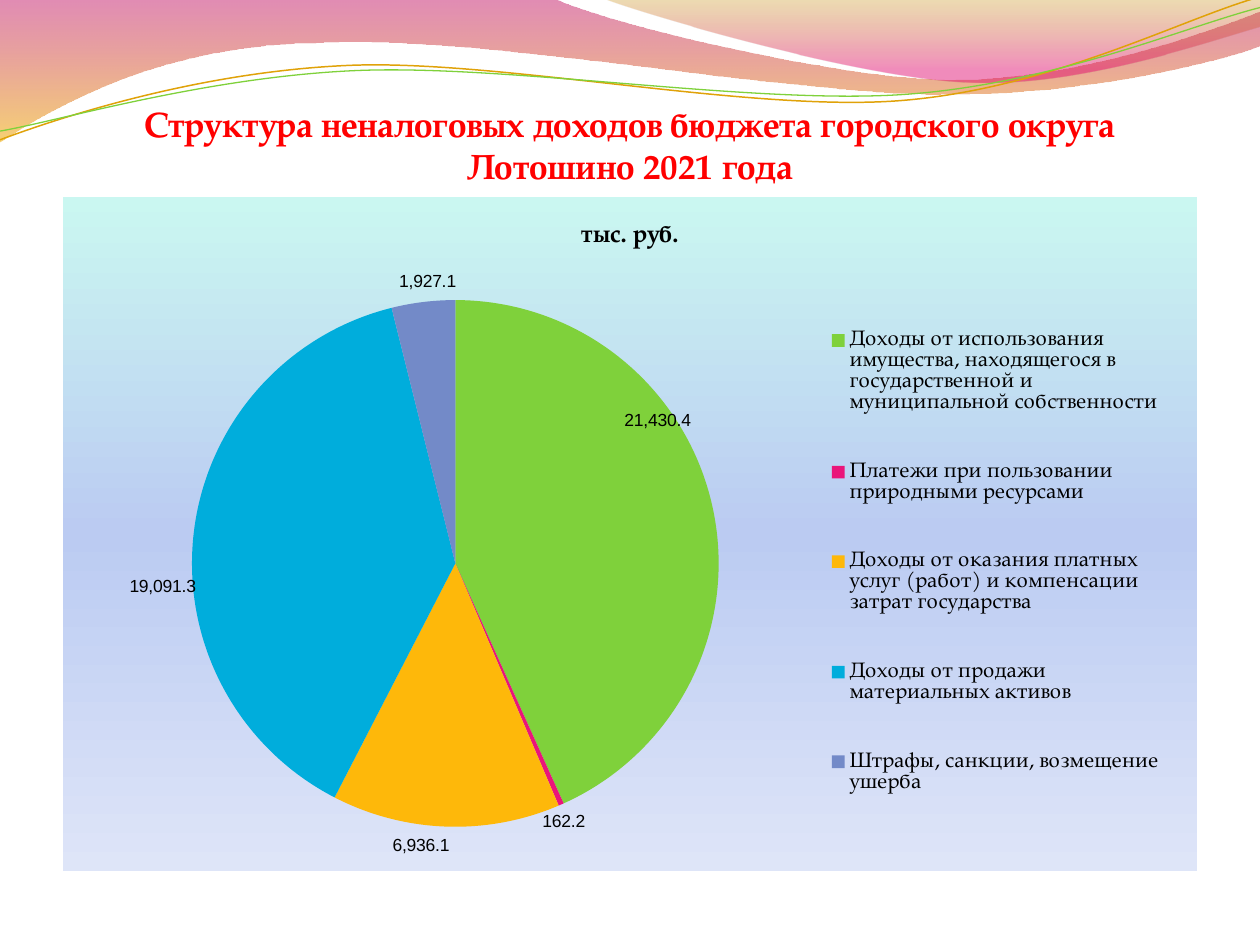
from lxml import etree
from pptx import Presentation
from pptx import util as u
from pptx.chart import data as cd
from pptx.dml.color import RGBColor
from pptx.enum import chart as ch, text
from pptx.oxml import parse_xml
from pptx.oxml.ns import nsdecls, qn

RED = RGBColor(0xFF, 0x00, 0x00)
BLACK = RGBColor(0x00, 0x00, 0x00)
GOLD = RGBColor(0xE0, 0xA2, 0x09)
GREEN = RGBColor(0x7F, 0xD1, 0x3B)
PINK = RGBColor(0xEA, 0x15, 0x7A)
AMBER = RGBColor(0xFE, 0xB8, 0x0A)
CYAN = RGBColor(0x00, 0xAD, 0xDC)
BLUE = RGBColor(0x73, 0x8A, 0xC8)
PLUM = RGBColor(0xBD, 0x00, 0x59)
ORANGE = RGBColor(0xF0, 0xAB, 0x00)
OCHRE = RGBColor(0xC3, 0x8B, 0x00)
ROSE = RGBColor(0xE1, 0x00, 0x6B)
MINT = RGBColor(0xCA, 0xF7, 0xF1)
SKY = RGBColor(0xBB, 0xCB, 0xF2)
PALE = RGBColor(0xDE, 0xE5, 0xF8)

SERIF = "TeX Gyre Pagella"
SANS = "Arial"
UNIT = "тыс. руб."

BANDS = [
    ([(0, -0.7), (316.8, -0.7), (342.7, 12.2, 478.1, 45.4, 545.8, 45.4),
      (614.2, 45.4, 689.8, 18.7, 720, 6.5), (720.7, 25.9),
      (707.8, 31.7, 626.4, 54.7, 537.1, 54),
      (447.8, 54, 275, 20.2, 185, 24.5),
      (92.9, 25.2, 33.1, 59.8, -0.7, 81.4)],
     [(0, PLUM, 45), (100, ORANGE, 55)]),
    ([(344.9, -0.7), (366.5, 7.9, 491, 44.6, 553.7, 46.8),
      (616.3, 49.7, 691.9, 23, 720, 15.1), (720, 0)],
     [(0, OCHRE, 30), (80, ROSE, 45)]),
]
LINES = [
    ([(0, 79.9), (34.6, 67, 113.8, 41, 199.4, 37.4),
      (284.4, 33.8, 427, 64.1, 513.4, 57.6),
      (599.8, 51.1, 675.4, 10.8, 718.6, -1.4)], GOLD, 0.85),
    ([(0, 74.9), (33.8, 69.1, 118.1, 43.9, 203.8, 40.3),
      (290.2, 36.7, 429.8, 59.8, 516.2, 54),
      (601.9, 48.2, 677.5, 15.1, 720, 4.3)], GREEN, 0.75),
]
ITEMS = [
    ("Доходы от использования имущества, находящегося в государственной "
     "и муниципальной собственности", 21430.4, GREEN, (-54.7, -43.3)),
    ("Платежи при пользовании природными ресурсами",
     162.2, PINK, (-12.5, 0.4)),
    ("Доходы от оказания платных услуг (работ) и компенсации затрат "
     "государства", 6936.1, AMBER, (-14, 1)),
    ("Доходы от продажи материальных активов",
     19091.3, CYAN, (5.5, 37)),
    ("Штрафы, санкции, возмещение ушерба",
     1927.1, BLUE, (19.3, -2)),
]


def blend(stops):
    marks = "".join(
        f'<a:gs pos="{pos * 1000}"><a:srgbClr val="{color}">'
        f'<a:alpha val="{alpha * 1000}"/></a:srgbClr></a:gs>'
        for pos, color, alpha in stops)
    return parse_xml(
        f'<a:gradFill {nsdecls("a")} rotWithShape="1"><a:gsLst>{marks}'
        '</a:gsLst><a:lin ang="5400000" scaled="0"/></a:gradFill>')


def draw(slide, left, top, steps, close):
    dots = [((left + step[i]) * 100, (top + step[i + 1]) * 100)
            for step in steps for i in range(0, len(step), 2)]
    pen = slide.shapes.build_freeform(*dots[0], scale=u.Pt(1) / 100)
    pen.add_line_segments(dots[1:], close=close)
    shape = pen.convert_to_shape()
    shape.shadow.inherit = False
    legs = iter(list(shape._element.iter(qn("a:lnTo"))))
    for step in steps[1:]:
        leg = next(legs)
        if len(step) == 6:
            leg.tag = qn("a:cubicBezTo")
            for _ in range(2):
                spare = next(legs)
                leg.append(spare[0])
                spare.getparent().remove(spare)
    return shape


def add_waves(slide, left, top):
    for steps, stops in BANDS:
        band = draw(slide, left, top, steps, True)
        band.line.fill.background()
        band._element.spPr.find(qn("a:custGeom")).addnext(blend(stops))
    for steps, color, width in LINES:
        line = draw(slide, left, top, steps, False)
        line.fill.background()
        line.line.color.rgb = color
        line.line.width = u.Pt(width)


def set_font(font, name, size, color, bold=False):
    font.name, font.size, font.bold = name, u.Pt(size), bold
    font.color.rgb = color


def add_title(slide, left, top, width, height):
    title = slide.shapes.title
    title.left, title.top = u.Pt(left), u.Pt(top)
    title.width, title.height = u.Pt(width), u.Pt(height)
    frame = title.text_frame
    frame.text = ("Структура неналоговых доходов бюджета городского округа "
                  "Лотошино 2021 года")
    frame.word_wrap = True
    frame.auto_size = text.MSO_AUTO_SIZE.NONE
    frame.vertical_anchor = text.MSO_ANCHOR.BOTTOM
    frame.margin_left = frame.margin_right = frame.margin_bottom = 0
    frame.margin_top = u.Pt(3.6)
    para = frame.paragraphs[0]
    para.alignment = text.PP_ALIGN.CENTER
    set_font(para.font, SERIF, 20, RED, True)


def place(size, x, y, w=None, h=None, inner=False):
    tags = [("xMode", "edge"), ("yMode", "edge")] if w else []
    if inner:
        tags.insert(0, ("layoutTarget", "inner"))
    tags += [("x", x / size[0]), ("y", y / size[1])]
    if w:
        tags += [("w", w / size[0]), ("h", h / size[1])]
    body = "".join(f'<c:{tag} val="{val}"/>' for tag, val in tags)
    return parse_xml(f'<c:layout {nsdecls("c")}><c:manualLayout>{body}'
                     '</c:manualLayout></c:layout>')


def add_pie(slide, left, top, width, height):
    size = width, height
    data = cd.CategoryChartData(number_format="#,##0.0")
    data.categories = [item[0] for item in ITEMS]
    data.add_series(UNIT, [item[1] for item in ITEMS])
    chart = slide.shapes.add_chart(
        ch.XL_CHART_TYPE.PIE, u.Pt(left), u.Pt(top),
        u.Pt(width), u.Pt(height), data).chart
    set_font(chart.font, SERIF, 18, BLACK)
    chart.has_title = True
    chart.chart_title.include_in_layout = False
    head = chart.chart_title.text_frame
    head.text = UNIT
    set_font(head.paragraphs[0].font, SERIF, 14, BLACK, True)
    chart.has_legend = True
    chart.legend.position = ch.XL_LEGEND_POSITION.RIGHT
    chart.legend.include_in_layout = False
    set_font(chart.legend.font, SERIF, 12, BLACK)

    plot = chart.plots[0]
    plot.vary_by_categories = True
    root = chart._chartSpace.find(qn("c:chart"))
    for i, (_, _, color, shift) in enumerate(ITEMS):
        point = plot.series[0].points[i]
        point.format.fill.solid()
        point.format.fill.fore_color.rgb = color
        label = point.data_label
        set_font(label.font, SANS, 10, BLACK)
        label.position = ch.XL_LABEL_POSITION.OUTSIDE_END
        mark = root.xpath(".//c:dLbl")[i]
        mark.find(qn("c:idx")).addnext(place(size, *shift))
    for group in root.xpath(".//c:dLbls"):
        lead = group.find(qn("c:showLeaderLines"))
        if lead is None:
            lead = etree.SubElement(group, qn("c:showLeaderLines"))
        lead.set("val", "0")

    area, key = root.find(qn("c:plotArea")), root.find(qn("c:legend"))
    for part in (area, key):
        for old in part.findall(qn("c:layout")):
            part.remove(old)
    area.insert(0, place(size, 73.7, 59, 301, 301, True))
    key.find(qn("c:legendPos")).addnext(place(size, 432.5, 49, 201, 319))
    back = parse_xml(f'<c:spPr {nsdecls("c", "a")}/>')
    back.append(blend([(0, MINT, 100), (50, SKY, 100), (100, PALE, 100)]))
    edge = etree.SubElement(back, qn("a:ln"))
    etree.SubElement(edge, qn("a:noFill"))
    root.addnext(back)


def main():
    deck = Presentation()
    deck.slide_width, deck.slide_height = u.Pt(720), u.Pt(540)
    slide = deck.slides.add_slide(deck.slide_layouts[5])
    add_waves(slide, 0, 0)
    add_title(slide, 36, 55.5, 648, 51)
    add_pie(slide, 36, 112.5, 648, 385)
    deck.save("out.pptx")


if __name__ == "__main__":
    main()
